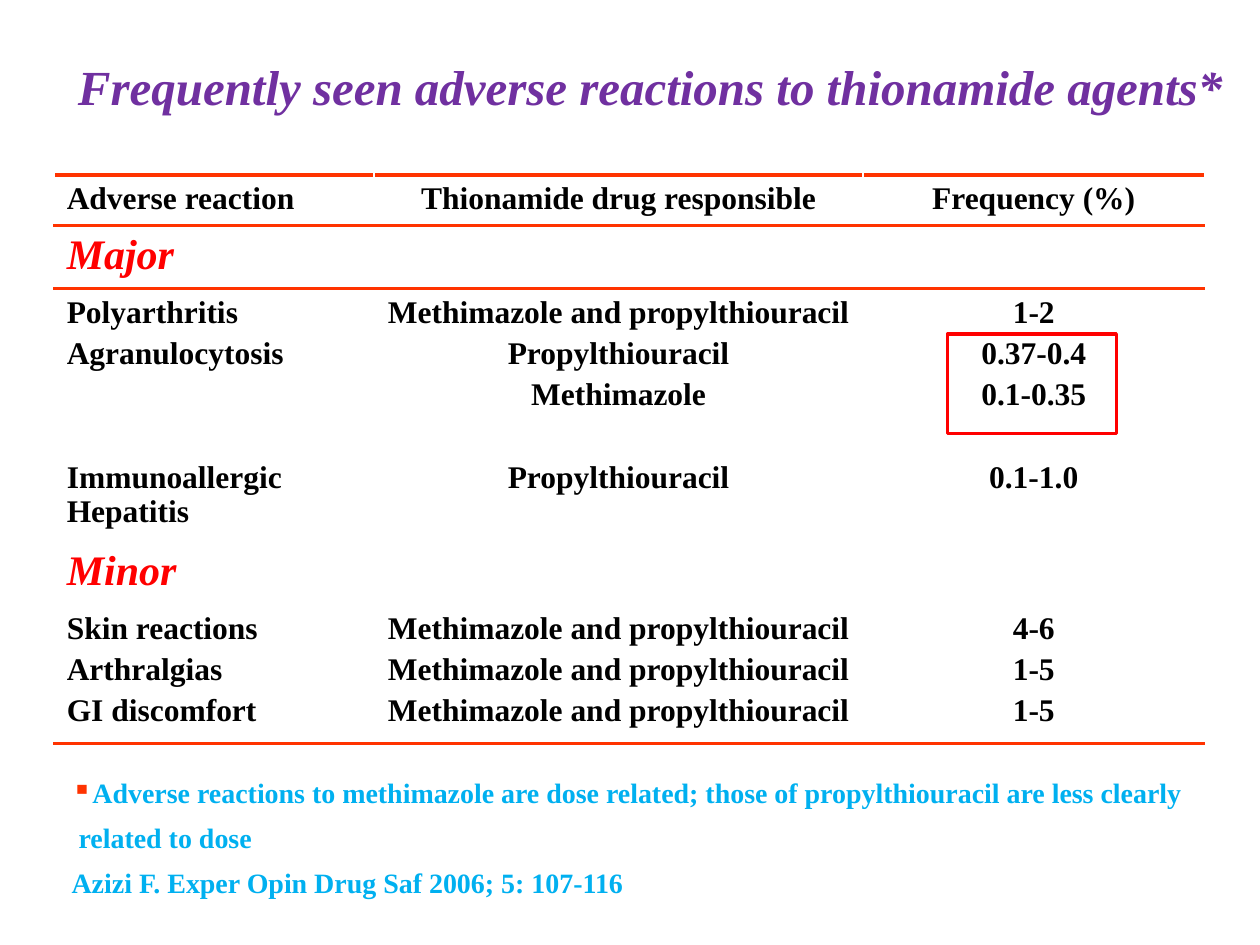
from lxml import etree
from pptx import Presentation
from pptx.dml.color import RGBColor
from pptx.enum.shapes import MSO_SHAPE
from pptx.enum.text import MSO_ANCHOR, PP_ALIGN
from pptx.oxml.ns import qn
from pptx.util import Inches, Pt

LEFT, CENTER, JUSTIFY = PP_ALIGN.LEFT, PP_ALIGN.CENTER, PP_ALIGN.JUSTIFY
MIDDLE = MSO_ANCHOR.MIDDLE
RECTANGLE = MSO_SHAPE.RECTANGLE

BLACK = RGBColor(0x00, 0x00, 0x00)
RED = RGBColor(0xFF, 0x00, 0x00)
ORANGE = RGBColor(0xFF, 0x33, 0x00)
PURPLE = RGBColor(0x70, 0x30, 0xA0)
SKY = RGBColor(0x00, 0xB0, 0xF0)


def write(frame, lines, size, color, align=LEFT, italic=False, space=0):
    """Fill a text frame with one bold paragraph per line."""
    for index, line in enumerate(lines):
        paragraph = frame.paragraphs[0] if index == 0 else frame.add_paragraph()
        paragraph.text = line
        paragraph.alignment = align
        paragraph.space_before = Pt(space)
        font = paragraph.font
        font.name = "Times New Roman"
        font.size = Pt(size)
        font.bold = True
        font.italic = italic
        font.color.rgb = color


def add_border(cell, side):
    """Draw an orange rule on one side of a cell: lnT or lnB."""
    line = etree.Element(qn(f"a:{side}"), w=str(Pt(2.25)))
    fill = etree.SubElement(line, qn("a:solidFill"))
    etree.SubElement(fill, qn("a:srgbClr"), val=str(ORANGE))
    properties = cell._tc.get_or_add_tcPr()
    position = len(properties.findall(qn("a:lnT")))
    properties.insert(position, line)


presentation = Presentation()
presentation.slide_width = Inches(10)
presentation.slide_height = Inches(7.5)
slide = presentation.slides.add_slide(presentation.slide_layouts[6])

# Title
title = slide.shapes.add_textbox(Inches(0.12), Inches(0.21), Inches(10.08), Inches(0.94))
title.text_frame.word_wrap = True
title.text_frame.vertical_anchor = MIDDLE
write(title.text_frame, ["Frequently seen adverse reactions to thionamide agents*"],
      28, PURPLE, CENTER, italic=True)

# Table: row height, then the lines of each cell
BOTH_DRUGS = "Methimazole and propylthiouracil"
rows = [
    (0.38, ["Adverse reaction"], ["Thionamide drug responsible"], ["Frequency (%)"]),
    (0.47, ["Major"], [], []),
    (1.31, ["Polyarthritis", "Agranulocytosis"],
     [BOTH_DRUGS, "Propylthiouracil", "Methimazole"],
     ["1-2", "0.37-0.4", "0.1-0.35"]),
    (0.66, ["Immunoallergic Hepatitis"], ["Propylthiouracil"], ["0.1-1.0"]),
    (0.47, ["Minor"], [], []),
    (1.04, ["Skin reactions", "Arthralgias", "GI discomfort"],
     [BOTH_DRUGS] * 3, ["4-6", "1-5", "1-5"]),
]
widths = [2.54, 3.88, 2.71]
table = slide.shapes.add_table(
    len(rows), len(widths), Inches(0.43), Inches(1.39),
    Inches(sum(widths)), Inches(sum(row[0] for row in rows))).table
table.first_row = False
table.horz_banding = False
for column, width in zip(table.columns, widths):
    column.width = Inches(width)

for row_index, (height, *cells) in enumerate(rows):
    table.rows[row_index].height = Inches(height)
    is_section = cells[0][0] in ("Major", "Minor")
    for column_index, lines in enumerate(cells):
        cell = table.cell(row_index, column_index)
        cell.fill.background()
        if column_index:
            align = CENTER
        else:
            align = JUSTIFY if row_index else LEFT
        write(cell.text_frame, lines, 24 if is_section else 18,
              RED if is_section else BLACK, align, is_section, space=3.6)
        if row_index == 0:
            add_border(cell, "lnT")
        if row_index in (0, len(rows) - 1):
            add_border(cell, "lnB")
        if row_index == 1:
            add_border(cell, "lnT")

# Footnote with a square bullet on its first line
footnote = slide.shapes.add_textbox(Inches(0.47), Inches(6.11), Inches(9.01), Inches(1.33))
footnote.text_frame.word_wrap = False
write(footnote.text_frame, [
    "Adverse reactions to methimazole are dose related; those of propylthiouracil are less clearly",
    " related to dose",
    "Azizi F. Exper Opin Drug Saf 2006; 5: 107-116",
], 16, SKY, space=6.3)
properties = footnote.text_frame.paragraphs[0]._p.get_or_add_pPr()
bullet_color = etree.Element(qn("a:buClr"))
etree.SubElement(bullet_color, qn("a:srgbClr"), val=str(ORANGE))
bullet = etree.Element(qn("a:buChar"), char="▪")
default_font = properties.find(qn("a:defRPr"))
default_font.addprevious(bullet_color)
default_font.addprevious(bullet)

# Frame around the agranulocytosis frequencies
highlight = slide.shapes.add_shape(
    RECTANGLE, Inches(7.52), Inches(2.65), Inches(1.34), Inches(0.79))
highlight.shadow.inherit = False
highlight.fill.background()
highlight.line.color.rgb = RED
highlight.line.width = Pt(2)

presentation.save("out.pptx")
